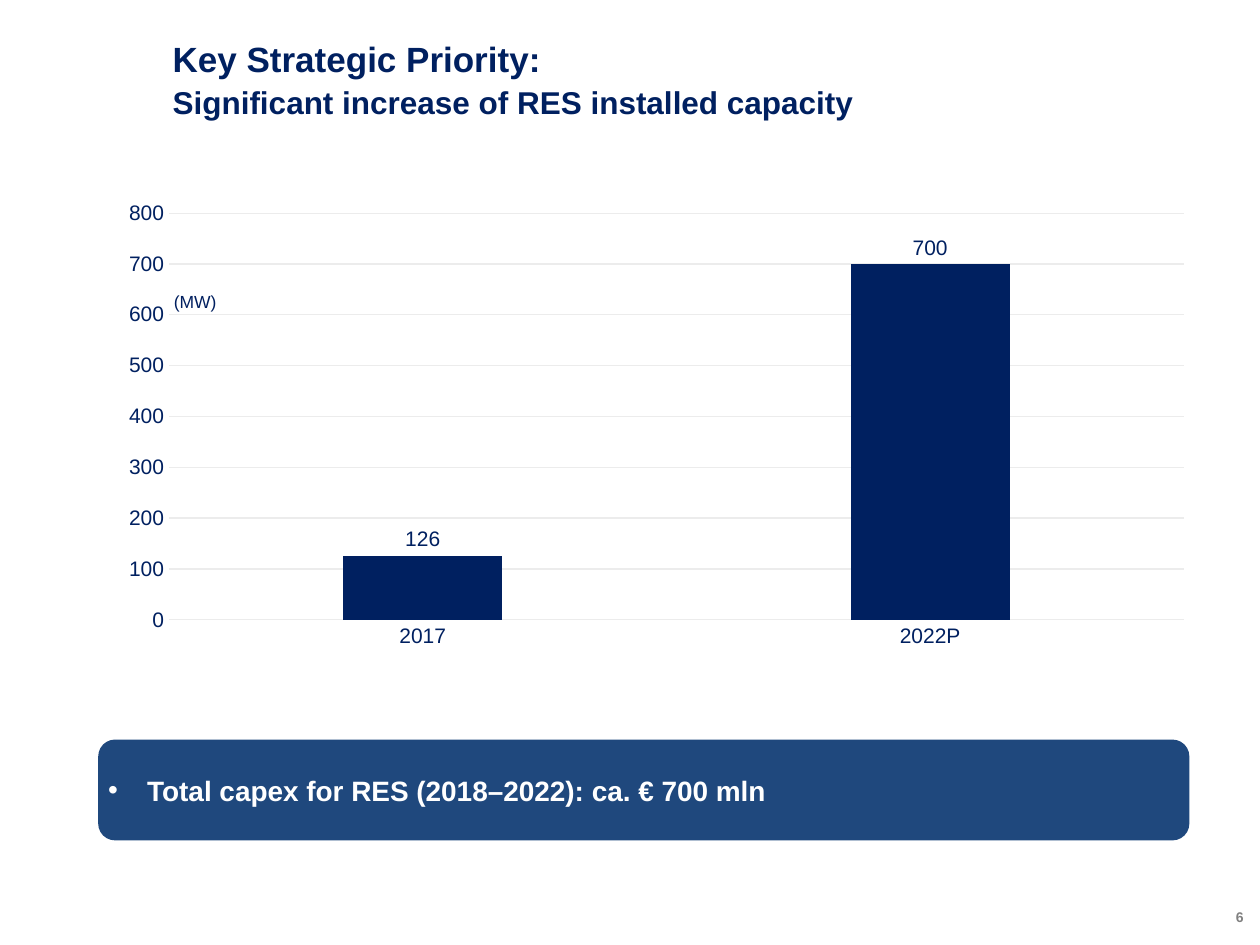
from lxml import etree
from pptx import Presentation
from pptx.chart.data import CategoryChartData
from pptx.dml.color import RGBColor
from pptx.enum.chart import XL_CHART_TYPE, XL_LABEL_POSITION, XL_TICK_MARK
from pptx.enum.shapes import MSO_SHAPE
from pptx.enum.text import MSO_ANCHOR, MSO_AUTO_SIZE, PP_ALIGN
from pptx.oxml.ns import qn
from pptx.util import Inches, Pt

COLUMN = XL_CHART_TYPE.COLUMN_CLUSTERED
OUTSIDE = XL_LABEL_POSITION.OUTSIDE_END
NO_TICK = XL_TICK_MARK.NONE
BANNER = MSO_SHAPE.FLOWCHART_ALTERNATE_PROCESS
MIDDLE = MSO_ANCHOR.MIDDLE
FIT_TEXT = MSO_AUTO_SIZE.SHAPE_TO_FIT_TEXT
NO_FIT = MSO_AUTO_SIZE.NONE
LEFT = PP_ALIGN.LEFT

NAVY = RGBColor(0x00, 0x20, 0x60)
UNIT_BLUE = RGBColor(0x00, 0x1F, 0x5F)
BANNER_BLUE = RGBColor(0x1F, 0x48, 0x7D)
GRID_GRAY = RGBColor(0xEC, 0xEC, 0xEC)
PAGE_GRAY = RGBColor(0x80, 0x80, 0x80)
WHITE = RGBColor(0xFF, 0xFF, 0xFF)
FONT = "Arial"
TITLE_ONLY = 5


def style_font(font, size, color, bold=False):
    """Apply the slide's typeface with a size, colour and weight."""
    font.name = FONT
    font.size = Pt(size)
    font.color.rgb = color
    font.bold = bold


def write_text(paragraph, text, size=12, color=NAVY, bold=False,
               line_spacing=None, space_after=0, bullet=None, indent=0):
    """Fill a paragraph with formatted text."""
    paragraph.alignment = LEFT
    paragraph.space_before = Pt(0)
    paragraph.space_after = Pt(space_after)
    if line_spacing:
        paragraph.line_spacing = line_spacing
    if bullet:
        properties = paragraph._p.get_or_add_pPr()
        properties.set("marL", str(Inches(indent)))
        properties.set("indent", str(-Inches(indent)))
        etree.SubElement(properties, qn("a:buFont")).set("typeface", FONT)
        etree.SubElement(properties, qn("a:buChar")).set("char", bullet)
    run = paragraph.add_run()
    run.text = text
    style_font(run.font, size, color, bold)


class SlideBuilder:
    """Hold the current slide and add styled elements to it."""

    def __init__(self, presentation):
        """Start a slide that has a title placeholder."""
        layout = presentation.slide_layouts[TITLE_ONLY]
        self.slide = presentation.slides.add_slide(layout)

    def add_title(self, heading, subheading, left, top, width, height):
        """Write a two-line title in the title placeholder."""
        title = self.slide.shapes.title
        title.left, title.top = Inches(left), Inches(top)
        title.width, title.height = Inches(width), Inches(height)
        frame = title.text_frame
        frame.vertical_anchor = MIDDLE
        frame.auto_size = NO_FIT
        write_text(frame.paragraphs[0], heading, size=20, bold=True,
                   line_spacing=0.8, space_after=6)
        write_text(frame.add_paragraph(), subheading, size=18, bold=True,
                   line_spacing=0.8)

    def add_label(self, text, left, top, width, height,
                  margin_left=0.1, wrap=True, **text_format):
        """Add a one-line text box."""
        box = self.slide.shapes.add_textbox(
            Inches(left), Inches(top), Inches(width), Inches(height))
        frame = box.text_frame
        frame.word_wrap = wrap
        frame.auto_size = NO_FIT if wrap else FIT_TEXT
        frame.margin_left = Inches(margin_left)
        write_text(frame.paragraphs[0], text, **text_format)

    def add_column_chart(self, categories, name, values,
                         left, top, width, height):
        """Add a single-series column chart with value labels."""
        data = CategoryChartData()
        data.categories = categories
        data.add_series(name, values)
        chart = self.slide.shapes.add_chart(
            COLUMN, Inches(left), Inches(top), Inches(width), Inches(height),
            data).chart
        chart.has_legend = False
        chart.has_title = False
        style_font(chart.font, 10, NAVY)

        value_axis = chart.value_axis
        value_axis.minimum_scale = 0
        value_axis.maximum_scale = 800
        value_axis.major_unit = 100
        value_axis.format.line.fill.background()
        for axis in (chart.category_axis, value_axis):
            axis.major_tick_mark = axis.minor_tick_mark = NO_TICK
            style_font(axis.tick_labels.font, 12, NAVY)
        for line in (chart.category_axis.format.line,
                     value_axis.major_gridlines.format.line):
            line.color.rgb = GRID_GRAY
            line.width = Pt(0.75)

        plot = chart.plots[0]
        plot.gap_width = 219
        plot.overlap = -27
        plot.vary_by_categories = False
        series = plot.series[0]
        series.format.fill.solid()
        series.format.fill.fore_color.rgb = NAVY
        labels = series.data_labels
        labels.show_value = True
        labels.position = OUTSIDE
        style_font(labels.font, 12, NAVY)

    def add_banner(self, text, left, top, width, height):
        """Add a filled banner with one bulleted line."""
        shape = self.slide.shapes.add_shape(
            BANNER, Inches(left), Inches(top), Inches(width), Inches(height))
        shape.shadow.inherit = False
        shape.fill.solid()
        shape.fill.fore_color.rgb = BANNER_BLUE
        shape.line.fill.background()
        frame = shape.text_frame
        frame.word_wrap = True
        frame.vertical_anchor = MIDDLE
        frame.margin_left = frame.margin_right = Inches(0.04)
        frame.margin_top = frame.margin_bottom = Inches(0.04)
        write_text(frame.paragraphs[0], text, size=16, color=WHITE, bold=True,
                   space_after=6, bullet="•", indent=0.31)


def main():
    """Build and save the presentation."""
    presentation = Presentation()
    presentation.slide_width = Inches(10)
    presentation.slide_height = Inches(7.5)
    builder = SlideBuilder(presentation)
    builder.add_label("6", 9.71, 7.16, 0.35, 0.21,
                      size=8, color=PAGE_GRAY, bold=True)
    builder.add_title("Key Strategic Priority:",
                      "Significant increase of RES installed capacity",
                      1.27, 0.31, 8.31, 0.7)
    builder.add_label("(MW)", 1.38, 2.26, 0.45, 0.27, margin_left=0,
                      wrap=False, size=10, color=UNIT_BLUE)
    builder.add_column_chart(["2017", "2022P"], "Series 1", [126, 700],
                             0.85, 1.53, 8.72, 3.68)
    builder.add_banner("Total capex for RES (2018–2022): ca. € 700 mln",
                       0.78, 5.87, 8.66, 0.8)
    presentation.save("out.pptx")


if __name__ == "__main__":
    main()
